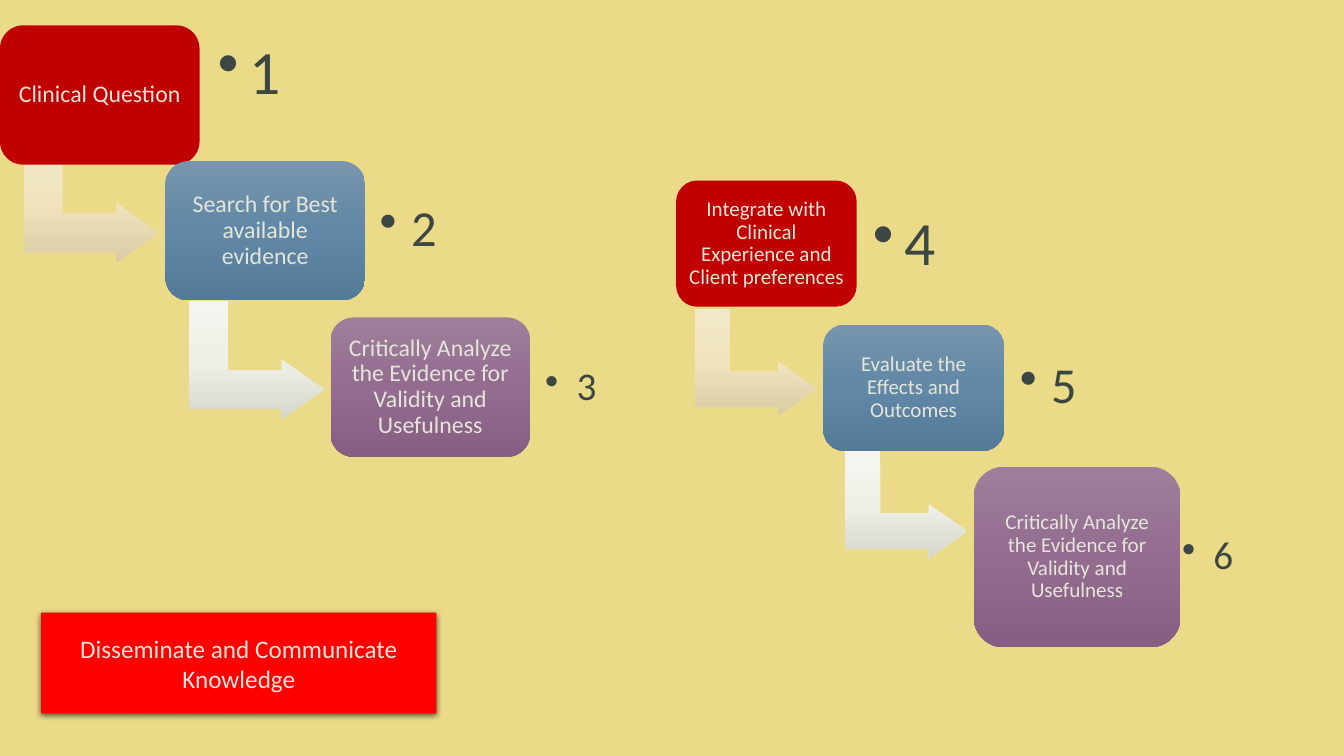
"""Build the evidence-based practice slide: two three-step staircases and a closing banner."""
from lxml import etree
from pptx import Presentation
from pptx.dml.color import RGBColor
from pptx.enum.shapes import MSO_SHAPE as SHAPE
from pptx.enum.text import MSO_ANCHOR as ANCHOR, PP_ALIGN as ALIGN
from pptx.oxml import parse_xml
from pptx.oxml.ns import nsdecls, qn
from pptx.util import Cm, Pt

COLORS = {"background": "EBDA87", "question": "C00000", "banner": "FF0000",
          "label": "E5E6DA", "number": "3C4743"}
GRADIENTS = {"sand": ("F2E8C9", "F1E4BD", "DACDA4"), "mist": ("F4F5EF", "EFF1E8", "D5D7CD"),
             "blue": ("7895AD", "6188A6", "537A97"), "plum": ("9E7F9B", "946C90", "855E82")}
BOX_FILLS = ["question", "blue", "plum"]
ARROW_FILLS = ["sand", "mist"]
NUMBER_SIZES = [44, 36, 28]
NUMBER_MARGINS = [0.46, 0.38, 0.38]

STAIRCASES = [
    {"first": 4, "label_size": 15, "arrow_size": (2.69, 3.07), "number_size": (3.3, 2.57),
     "arrows": [(17.7, 7.59), (21.49, 11.18)],
     "numbers": [(21.54, 4.9), (25.32, 8.48), (29.41, 12.75)],
     "boxes": [(17.04, 4.55, 4.55, 3.18, 0.15, "Integrate with Clinical Experience and Client preferences"),
               (20.75, 8.18, 4.55, 3.18, 0.15, "Evaluate the Effects and Outcomes"),
               (24.54, 11.76, 5.21, 4.55, 0.2, "Critically Analyze the Evidence for Validity and Usefulness")]},
    {"first": 1, "label_size": 17, "arrow_size": (2.97, 3.4), "number_size": (3.66, 2.84),
     "arrows": [(0.81, 3.43), (4.98, 7.37)],
     "numbers": [(5.03, 0.46), (9.19, 4.39), (13.36, 8.36)],
     "boxes": [(0, 0.64, 5.03, 3.51, 0.17, "Clinical Question"),
               (4.17, 4.06, 5.03, 3.51, 0.17, "Search for Best available evidence"),
               (8.33, 8, 5.03, 3.51, 0.17, "Critically Analyze the Evidence for Validity and Usefulness")]},
]


def add_filled(shapes, kind, box, fill):
    sp = shapes.add_shape(kind, *map(Cm, box))
    sp.shadow.inherit = False
    sp.line.fill.background()
    if fill in GRADIENTS:
        stops = "".join(f'<a:gs pos="{i * 50000}"><a:srgbClr val="{color}"/></a:gs>'
                        for i, color in enumerate(GRADIENTS[fill]))
        grad = parse_xml(f'<a:gradFill {nsdecls("a")} rotWithShape="0"><a:gsLst>{stops}</a:gsLst>'
                         '<a:lin ang="5400000" scaled="0"/></a:gradFill>')
        sp._element.spPr.find(qn("a:prstGeom")).addnext(grad)
    else:
        sp.fill.solid()
        sp.fill.fore_color.rgb = RGBColor.from_string(COLORS[fill])
    return sp


def write(sp, text, size, color, align, margin=None, spacing=None):
    tf = sp.text_frame
    tf.word_wrap = True
    tf.vertical_anchor = ANCHOR.MIDDLE
    if margin is not None:
        tf.margin_left = tf.margin_top = tf.margin_right = tf.margin_bottom = Cm(margin)
    p = tf.paragraphs[0]
    p.alignment = align
    p.line_spacing = spacing
    r = p.add_run()
    r.text = text
    r.font.name = "Calibri"
    r.font.size = Pt(size)
    r.font.color.rgb = RGBColor.from_string(COLORS[color])
    return p


prs = Presentation()
prs.slide_width, prs.slide_height = Cm(33.87), Cm(19.05)
s = prs.slides.add_slide(prs.slide_layouts[6])
s.background.fill.solid()
s.background.fill.fore_color.rgb = RGBColor.from_string(COLORS["background"])

for stairs in STAIRCASES:
    shapes = s.shapes.add_group_shape().shapes
    for i, (x, y, w, h, margin, label) in enumerate(stairs["boxes"]):
        if i < len(stairs["arrows"]):
            arrow = add_filled(shapes, SHAPE.BENT_UP_ARROW,
                               stairs["arrows"][i] + stairs["arrow_size"], ARROW_FILLS[i])
            arrow.rotation = 90
            for j, value in enumerate((0.328, 0.25, 0.358)):
                arrow.adjustments[j] = value

        step = add_filled(shapes, SHAPE.ROUNDED_RECTANGLE, (x, y, w, h), BOX_FILLS[i])
        write(step, label, stairs["label_size"], "label", ALIGN.CENTER, margin, 0.9)

        number = shapes.add_textbox(*map(Cm, stairs["numbers"][i] + stairs["number_size"]))
        p = write(number, str(stairs["first"] + i), NUMBER_SIZES[i], "number", ALIGN.LEFT,
                  NUMBER_MARGINS[i], 0.9)
        pPr = p._p.get_or_add_pPr()
        pPr.set("lvl", "1")
        pPr.set("marL", str(Cm(0.79)))
        pPr.set("indent", str(-Cm(0.79)))
        etree.SubElement(pPr, qn("a:buChar")).set("char", "•")

banner = add_filled(s.shapes, SHAPE.RECTANGLE, (1.04, 15.44, 9.96, 2.54), "banner")
write(banner, "Disseminate and Communicate Knowledge", 18, "label", ALIGN.CENTER)
banner._element.spPr.find(qn("a:effectLst")).append(parse_xml(
    f'<a:outerShdw {nsdecls("a")} blurRad="{Pt(4.5)}" dist="{Pt(1.5)}" dir="5400000" rotWithShape="0">'
    '<a:srgbClr val="000000"><a:alpha val="63000"/></a:srgbClr></a:outerShdw>'))

prs.save("out.pptx")
